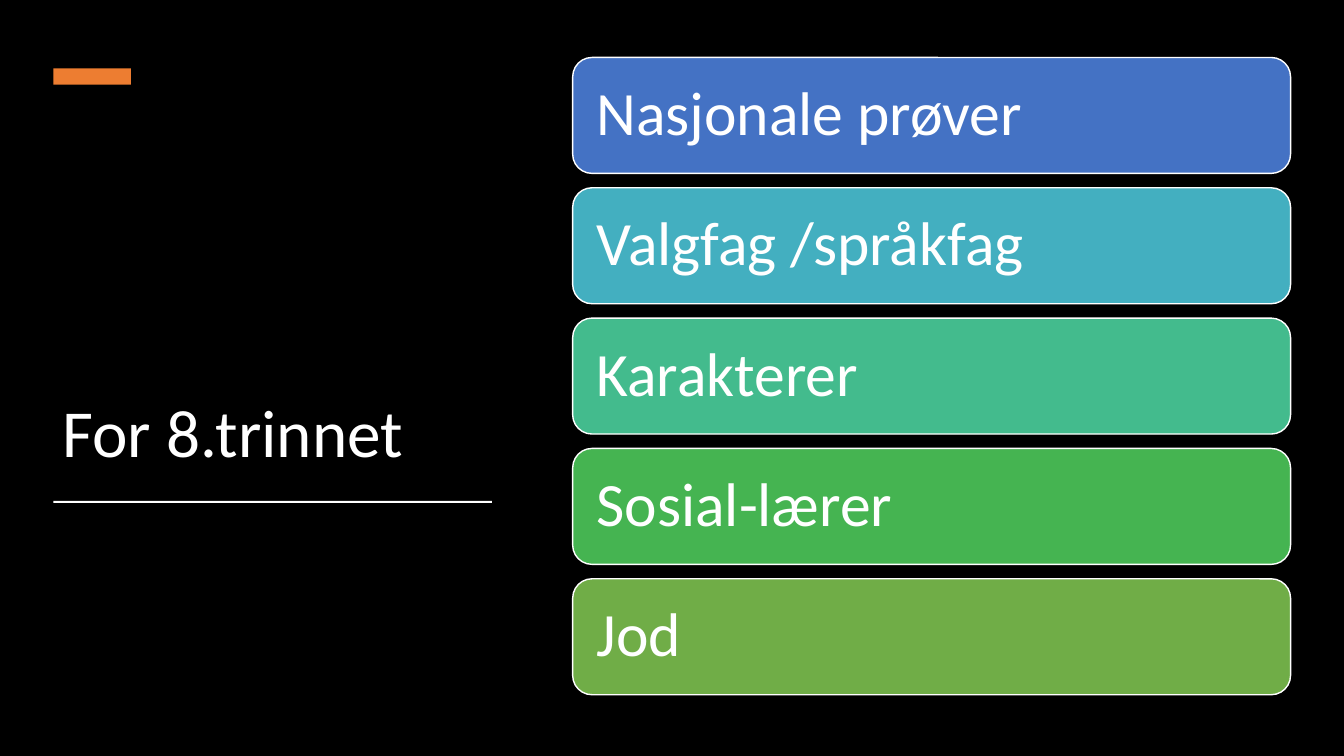
from dataclasses import dataclass

from pptx import Presentation
from pptx.dml.color import RGBColor
from pptx.enum.shapes import MSO_SHAPE
from pptx.enum.text import MSO_ANCHOR, PP_ALIGN
from pptx.util import Inches, Pt

RECTANGLE = MSO_SHAPE.RECTANGLE
ROUNDED = MSO_SHAPE.ROUNDED_RECTANGLE
MIDDLE, BOTTOM = MSO_ANCHOR.MIDDLE, MSO_ANCHOR.BOTTOM
LEFT = PP_ALIGN.LEFT


@dataclass(frozen=True)
class Theme:
    background: str = "000000"
    light: str = "FFFFFF"
    accent: str = "ED7D31"
    cards: tuple = ("4472C4", "43AFC0", "43BB8D", "45B451", "70AD47")
    font: str = "Calibri"
    title_size: int = 48
    card_size: int = 44


theme = Theme()
topics = ["Nasjonale prøver", "Valgfag /språkfag", "Karakterer", "Sosial-lærer", "Jod"]

CARD_LEFT, CARD_TOP = 5.68, 0.57
CARD_WIDTH, CARD_HEIGHT = 7.12, 1.15
CARD_PITCH = 1.293

deck = Presentation()
deck.slide_width, deck.slide_height = Inches(13.33), Inches(7.5)
page = deck.slides.add_slide(deck.slide_layouts[6])
page.background.fill.solid()
page.background.fill.fore_color.rgb = RGBColor.from_string(theme.background)


def add_block(kind, left, top, width, height, color):
    """Add a solid shape without outline or shadow."""
    block = page.shapes.add_shape(
        kind, Inches(left), Inches(top), Inches(width), Inches(height))
    block.shadow.inherit = False
    block.fill.solid()
    block.fill.fore_color.rgb = RGBColor.from_string(color)
    block.line.fill.background()
    return block


def write_line(shape, text, size, anchor):
    """Write one left-aligned line of light text in the shape."""
    frame = shape.text_frame
    frame.word_wrap = True
    frame.vertical_anchor = anchor
    para = frame.paragraphs[0]
    para.text = text
    para.alignment = LEFT
    para.line_spacing = 0.9
    para.font.name = theme.font
    para.font.size = Pt(size)
    para.font.color.rgb = RGBColor.from_string(theme.light)


# Title column
title = page.shapes.add_textbox(Inches(0.52), Inches(1.23), Inches(4.4), Inches(3.5))
write_line(title, "For 8.trinnet", theme.title_size, BOTTOM)
add_block(RECTANGLE, 0.53, 0.68, 0.77, 0.16, theme.accent)
add_block(RECTANGLE, 0.53, 4.97, 4.35, 0.02, theme.light)

# Topic cards
for index, (topic, color) in enumerate(zip(topics, theme.cards)):
    card = add_block(ROUNDED, CARD_LEFT, CARD_TOP + index * CARD_PITCH,
                     CARD_WIDTH, CARD_HEIGHT, color)
    card.line.color.rgb = RGBColor.from_string(theme.light)
    card.line.width = Pt(1)
    card.text_frame.margin_left = card.text_frame.margin_right = Inches(0.18)
    write_line(card, topic, theme.card_size, MIDDLE)

deck.save("out.pptx")
